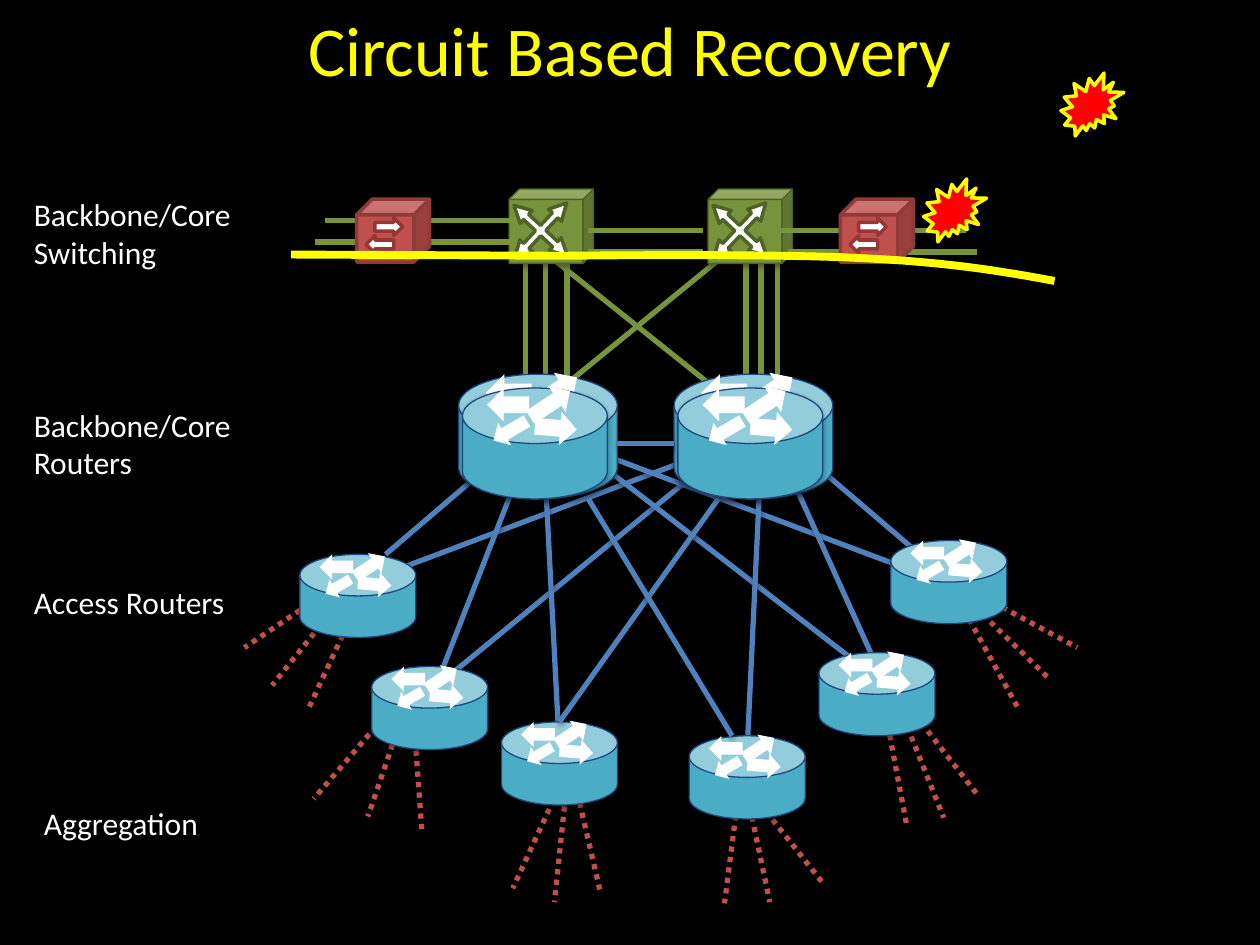
from dataclasses import dataclass

from lxml.etree import SubElement
from pptx import Presentation
from pptx.dml.color import RGBColor
from pptx.enum.dml import MSO_LINE_DASH_STYLE as Dash
from pptx.enum.shapes import MSO_CONNECTOR as Connector, MSO_SHAPE as Shape
from pptx.enum.text import MSO_ANCHOR as Anchor, PP_ALIGN as Align
from pptx.oxml.ns import qn
from pptx.util import Emu, Inches, Pt

COLUMNS, ROWS = 100, 75


@dataclass(frozen=True)
class Theme:
    font: str = "Calibri"
    title_size: int = 40
    label_size: int = 18
    background: str = "000000"
    text: str = "FFFFFF"
    accent: str = "FFFF00"
    alarm: str = "FF0000"
    router: str = "4BACC6"
    router_edge: str = "1F497D"
    router_link: str = "4F81BD"
    switch: str = "77933C"
    switch_edge: str = "4F6228"
    mux: str = "C0504D"
    mux_edge: str = "8E3B39"
    mux_arrow_edge: str = "953735"


class Diagram:
    """Draws on one slide; lengths are columns and rows of a 100 x 75 grid."""

    def __init__(self, presentation, theme):
        self.theme = theme
        self.column = presentation.slide_width / COLUMNS
        self.row = presentation.slide_height / ROWS
        self.slide = presentation.slides.add_slide(presentation.slide_layouts[5])
        fill = self.slide.background.fill
        fill.solid()
        fill.fore_color.rgb = RGBColor.from_string(theme.background)

    def place(self, left, top, width, height):
        return [Emu(round(value * unit)) for value, unit in
                zip((left, top, width, height), (self.column, self.row) * 2)]

    def set_text(self, frame, text, size, color, align):
        frame.word_wrap = True
        frame.vertical_anchor = Anchor.TOP
        frame.text = text
        paragraph = frame.paragraphs[0]
        paragraph.alignment = align
        paragraph.font.name = self.theme.font
        paragraph.font.size = Pt(size)
        paragraph.font.color.rgb = RGBColor.from_string(color)

    def title(self, text, *box):
        shape = self.slide.shapes.title
        shape.left, shape.top, shape.width, shape.height = self.place(*box)
        self.set_text(shape.text_frame, text, self.theme.title_size,
                      self.theme.accent, Align.CENTER)

    def label(self, text, *box):
        shape = self.slide.shapes.add_textbox(*self.place(*box))
        self.set_text(shape.text_frame, text, self.theme.label_size,
                      self.theme.text, Align.LEFT)

    def outline(self, line, color, width):
        line.color.rgb = RGBColor.from_string(color)
        line.width = Pt(width)

    def link(self, x1, y1, x2, y2, color, dash=None, shadow=False):
        connector = self.slide.shapes.add_connector(
            Connector.STRAIGHT, *self.place(x1, y1, x2, y2))
        self.outline(connector.line, color, 3)
        if dash:
            connector.line.dash_style = dash
        if not shadow:
            SubElement(connector._element.spPr, qn("a:effectLst"))

    def links(self, ends, color, **style):
        for end in ends:
            self.link(*end, color, **style)

    def shape(self, kind, box, fill, edge=None, width=2, rotation=0,
              adjustments=(), shadow=False, parent=None):
        shape = (parent or self.slide).shapes.add_shape(kind, *self.place(*box))
        shape.fill.solid()
        shape.fill.fore_color.rgb = RGBColor.from_string(fill)
        if edge:
            self.outline(shape.line, edge, width)
        else:
            shape.line.fill.background()
        shape.rotation = rotation
        for index, value in enumerate(adjustments):
            shape.adjustments[index] = value
        if not shadow:
            shape.shadow.inherit = False

    def icon(self, box, body, arrows, edge=None):
        """Group a body with arrows given as shares of the body's box."""
        left, top, width, height = box
        group = self.slide.shapes.add_group_shape()
        self.shape(box=box, parent=group, **body)
        for kind, rotation, (x, y, w, h), *adjustments in arrows:
            arrow_box = left + x * width, top + y * height, w * width, h * height
            self.shape(kind, arrow_box, self.theme.text, edge, rotation=rotation,
                       adjustments=adjustments, parent=group)

    def router(self, *box):
        body = dict(kind=Shape.CAN, fill=self.theme.router, edge=self.theme.router_edge,
                    width=0.75, adjustments=[0.5], shadow=True)
        self.icon(box, body, [
            (Shape.DOWN_ARROW, 59.9, (0.24, 0.21, 0.18, 0.35)),
            (Shape.DOWN_ARROW, 236.4, (0.5, -0.07, 0.21, 0.43)),
            (Shape.RIGHT_ARROW, 180, (0.17, 0, 0.29, 0.3)),
            (Shape.RIGHT_ARROW, 4.6, (0.5, 0.21, 0.29, 0.3))])

    def switch(self, left, top):
        body = dict(kind=Shape.CUBE, fill=self.theme.switch, edge=self.theme.switch_edge,
                    width=0.75, adjustments=[0.14], shadow=True)
        self.icon((left, top, 6.7, 5.9), body, [
            (Shape.QUAD_ARROW, 43.2, (-0.06, 0.05, 0.87, 1.02), 0.1, 0.12, 0.23)],
            self.theme.switch_edge)

    def mux(self, left, top):
        body = dict(kind=Shape.CUBE, fill=self.theme.mux, edge=self.theme.mux_edge)
        self.icon((left, top, 5.8, 5), body, [
            (Shape.RIGHT_ARROW, 0, (0.25, 0.3, 0.38, 0.28)),
            (Shape.RIGHT_ARROW, 180, (0.13, 0.58, 0.38, 0.28))],
            self.theme.mux_arrow_edge)

    def burst(self, left, top):
        self.shape(Shape.EXPLOSION2, (left, top, 5, 5), self.theme.alarm, self.theme.accent)

    def curve(self, start, segments, end, steps=12):
        """Trace cubic segments, then a straight run to the end."""
        points = [start]
        for controls in segments:
            corners = (points[-1], *controls)
            for step in range(1, steps + 1):
                t = step / steps
                weights = (1 - t) ** 3, 3 * t * (1 - t) ** 2, 3 * t * t * (1 - t), t ** 3
                points.append(tuple(sum(weight * corner[axis] for weight, corner
                                        in zip(weights, corners)) for axis in (0, 1)))
        points.append(end)
        scaled = [(x * self.column, y * self.row) for x, y in points]
        builder = self.slide.shapes.build_freeform(*scaled[0])
        builder.add_line_segments(scaled[1:], close=False)
        shape = builder.convert_to_shape()
        shape.fill.background()
        shape.shadow.inherit = False
        self.outline(shape.line, self.theme.accent, 4.5)


def main():
    presentation = Presentation()
    presentation.slide_width, presentation.slide_height = Inches(10), Inches(7.5)
    theme = Theme()
    diagram = Diagram(presentation, theme)
    diagram.title("Circuit Based Recovery", 2.5, 0, 95, 7.7)

    # Links from switches to core routers
    diagram.links([(x, y, x, y - 11.1) for x, y in (
        (61.7, 31.1), (59.2, 31.9), (41.7, 31.1), (45, 31.9), (43.3, 31.9), (60.4, 31.9))]
        + [(44.2, 31.1, 57.8, 20), (58.1, 31.9, 44.2, 20.8)], theme.switch)

    # Links from access routers to core routers
    diagram.links([
        (30.6, 44, 40.9, 35.2), (31.8, 45.1, 58.1, 35.2), (35.2, 52.9, 42.1, 35.2),
        (35.2, 54, 58.1, 35.2), (44.4, 59.5, 43.2, 36.3), (73, 44, 62.7, 35.2),
        (71.9, 45.1, 45.5, 35.2), (69.6, 52.9, 61.6, 35.2), (68.4, 52.9, 45.5, 35.2),
        (59.3, 59.5, 60.4, 36.3)], theme.router_link, shadow=True)

    # Aggregation links
    diagram.links([
        (43.6, 64.2, 40.7, 70.5), (44.8, 64, 44, 71.6), (46, 63.7, 47.6, 70.6),
        (58.4, 64.7, 57.5, 71.7), (59.5, 64, 61.1, 71.6), (60.8, 64.4, 65.4, 70.2),
        (30.4, 57, 24.9, 63.4), (31.7, 57.5, 29.2, 64.8), (32.9, 57.9, 33.5, 66.2),
        (25.2, 47.5, 19.4, 51.4), (26.5, 48.3, 21.6, 54.4), (27.9, 48.9, 24.5, 56.2),
        (70.3, 56.7, 72, 65.7), (71.7, 56.9, 74.9, 64.9), (72.6, 56.7, 77.6, 63.1),
        (76.5, 48.4, 80.8, 56.2), (77.4, 48.2, 83.2, 53.8), (78.8, 47.8, 85.5, 51.4)],
        theme.mux, dash=Dash.ROUND_DOT)

    # Rear core routers, then access routers
    for left in (36.4, 53.5):
        diagram.router(left, 29.7, 12.6, 9.9)
    for left, top in ((23.8, 44), (29.5, 52.9), (39.8, 57.3),
                      (54.7, 58.4), (65, 51.8), (70.7, 42.9)):
        diagram.router(left, top, 9.2, 6.6)
    diagram.links([(44.4, 57.3, 57, 39.6), (58.1, 58.4, 46.7, 39.6),
                   (49, 35.2, 53.5, 35.2)], theme.router_link, shadow=True)

    # Layer names
    diagram.label("Backbone/Core Switching", 1.7, 15, 20, 7.1)
    diagram.label("Backbone/Core Routers", 1.7, 31.7, 20, 7.1)
    diagram.label("Access Routers", 1.7, 45.8, 20, 4)
    diagram.label("Aggregation", 2.5, 63.3, 20, 4)

    # Switching layer
    for left in (56.2, 40.4):
        diagram.switch(left, 15)
    diagram.links([(55.8, 20, 46.7, 20), (55.8, 18.3, 46.7, 18.3),
                   (40.8, 17.5, 25.8, 17.5), (40.8, 19.2, 25, 19.2)], theme.switch)
    diagram.mux(28.3, 15.8)
    diagram.links([(76.7, 18.3, 61.7, 18.3), (77.5, 20, 62.5, 20)], theme.switch)
    diagram.mux(66.7, 15.8)

    # Failures and the recovery circuit
    diagram.burst(84.2, 5.8)
    diagram.burst(73.3, 14.2)
    diagram.curve((83.7, 22.3), [((79.4, 21.5), (75.1, 20.8), (68.6, 20.5)),
                                 ((62.1, 20.1), (44.5, 20.3), (44.5, 20.3))], (23.1, 20.2))

    # Front core routers
    for left in (36.7, 53.8):
        diagram.router(left, 30.8, 11.5, 8.8)

    presentation.save("out.pptx")


if __name__ == "__main__":
    main()
